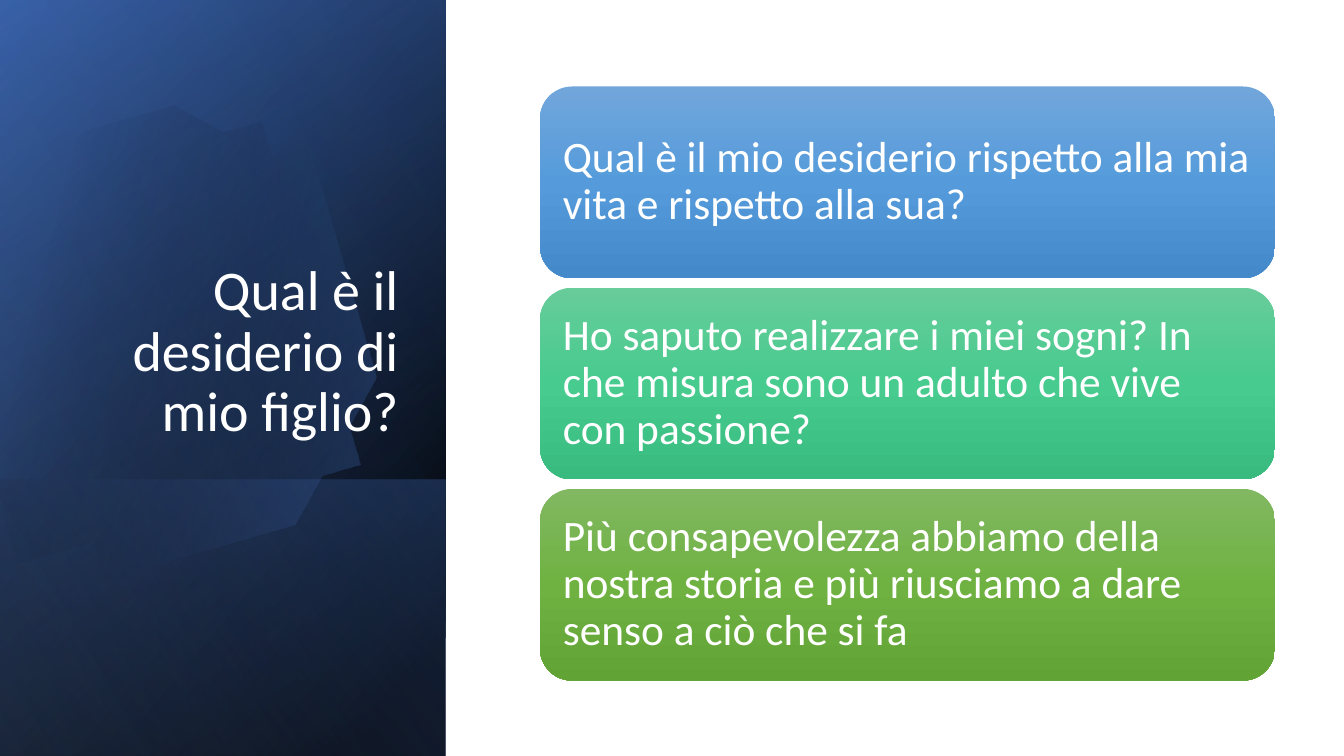
"""Build the slide on a child's wishes: a dark title panel beside three cards."""
import math

from pptx import Presentation
from pptx import util as u
from pptx.dml.color import RGBColor
from pptx.enum import shapes, text
from pptx.oxml import parse_xml
from pptx.oxml.ns import nsdecls, qn


def color(value):
    """Turn a hex string into a colour."""
    return RGBColor.from_string(value)


def bezier(start, first, second, end, steps=16):
    """Return the points of a cubic curve after its start."""
    points = []
    for step in range(1, steps + 1):
        t = step / steps
        weights = ((1 - t) ** 3, 3 * t * (1 - t) ** 2, 3 * t * t * (1 - t), t ** 3)
        corners = (start, first, second, end)
        points.append(tuple(sum(w * c[axis] for w, c in zip(weights, corners))
                            for axis in (0, 1)))
    return points


def turn(point, center, degrees):
    """Rotate a point clockwise around a center."""
    angle = math.radians(degrees)
    dx, dy = point[0] - center[0], point[1] - center[1]
    return (center[0] + dx * math.cos(angle) - dy * math.sin(angle),
            center[1] + dx * math.sin(angle) + dy * math.cos(angle))


class SlideBuilder:
    """Hold the style and the current slide."""

    font = {"name": "Calibri", "color": "FFFFFF"}

    def __init__(self, slide):
        """Keep the slide to draw on."""
        self.slide = slide

    def gradient(self, shape, stops, angle):
        """Fill a shape with (position, colour, opacity) stops and no outline."""
        shape.shadow.inherit = False
        shape.line.fill.background()
        shape.fill.gradient()
        marks = "".join(
            f'<a:gs pos="{position * 1000}"><a:srgbClr val="{tint}">'
            f'<a:alpha val="{opacity * 1000}"/></a:srgbClr></a:gs>'
            for position, tint, opacity in stops)
        properties = shape._element.spPr
        properties.replace(properties.find(qn("a:gradFill")), parse_xml(
            f'<a:gradFill {nsdecls("a")} rotWithShape="1"><a:gsLst>{marks}</a:gsLst>'
            f'<a:lin ang="{angle * 60000}" scaled="0"/></a:gradFill>'))

    def label(self, shape, words, size, align, anchor, inset):
        """Put one styled paragraph into a shape."""
        frame = shape.text_frame
        frame_format = {"word_wrap": True, "vertical_anchor": anchor,
                        "margin_left": u.Cm(inset), "margin_right": u.Cm(inset),
                        "margin_top": u.Cm(0.13), "margin_bottom": u.Cm(0.13)}
        for key, value in frame_format.items():
            setattr(frame, key, value)
        paragraph = frame.paragraphs[0]
        for key, value in {"alignment": align, "line_spacing": 0.9}.items():
            setattr(paragraph, key, value)
        run = paragraph.add_run()
        run.text = words
        for key, value in {"name": self.font["name"], "size": u.Pt(size)}.items():
            setattr(run.font, key, value)
        run.font.color.rgb = color(self.font["color"])

    def layer(self, box, stops, angle):
        """Add a mirrored rectangle on its side as a layer of the panel."""
        sheet = self.slide.shapes.add_shape(
            shapes.MSO_SHAPE.RECTANGLE, *map(u.Cm, box))
        sheet.rotation = 90
        sheet._element.spPr.xfrm.set("flipH", "1")
        self.gradient(sheet, stops, angle)

    def disc(self, outline, center, rotation, stops, angle):
        """Add a tilted disc whose outline is given as it stands on the slide."""
        upright = [turn(point, center, -rotation) for point in outline]
        builder = self.slide.shapes.build_freeform(*upright[0], scale=u.Cm(1))
        builder.add_line_segments(upright[1:], close=True)
        circle = builder.convert_to_shape()
        circle.rotation = rotation
        self.gradient(circle, stops, angle)

    def title(self, box, words):
        """Add the title at the right edge of the panel."""
        heading = self.slide.shapes.add_textbox(*map(u.Cm, box))
        self.label(heading, words, 40, text.PP_ALIGN.RIGHT,
                   text.MSO_ANCHOR.BOTTOM, 0.25)

    def card(self, box, words, tints):
        """Add a rounded card with a three-colour gradient."""
        card = self.slide.shapes.add_shape(
            shapes.MSO_SHAPE.ROUNDED_RECTANGLE, *map(u.Cm, box))
        self.gradient(card, [(i * 50, tint, 100) for i, tint in enumerate(tints)], 90)
        self.label(card, words, 31, text.PP_ALIGN.LEFT,
                   text.MSO_ANCHOR.MIDDLE, 0.34)


PANEL = (-3.91, 3.91, 19.05, 11.23)
FOOT = (2.13, 9.96, 6.96, 11.23)
BASE_LAYERS = [
    (PANEL, [(8, "000000", 100), (100, "2F5597", 100)], 50),
    (PANEL, [(0, "000000", 0), (99, "4472C4", 46)], 30),
    (FOOT, [(2, "4472C4", 29), (100, "000000", 30)], 130),
]
GLOW = (PANEL, [(0, "000000", 0), (99, "8FAADC", 11)], 120)
DISC_START = (3.78, 2.79)
DISC_CURVES = [
    ((6.25, 2.84), (8.51, 4.5), (9.22, 6.99)),
    ((10.11, 10.08), (8.33, 13.28), (5.26, 14.17)),
    ((3.33, 14.73), (1.35, 14.25), (-0.08, 13.06)),
]
DISC_EDGE = [(-0.38, 12.78), (-0.38, 4.45), (0, 4.09)]
DISC_CLOSE = [
    ((0.58, 3.61), (1.27, 3.25), (2.03, 3.02)),
    ((2.62, 2.87), (3.2, 2.79), DISC_START),
]
CARDS = [
    ("Qual è il mio desiderio rispetto alla mia vita e rispetto alla sua?",
     ("71A6DB", "559BDB", "448ACA")),
    ("Ho saputo realizzare i miei sogni? In che misura sono un adulto che vive "
     "con passione?", ("67CC9A", "47CB8E", "39BB7F")),
    ("Più consapevolezza abbiamo della nostra storia e più riusciamo a dare "
     "senso a ciò che si fa", ("81B861", "6FB242", "62A336")),
]
CARD_TOP, CARD_PITCH = 2.18, 5.07


def disc_outline():
    """Join the curves and the straight edge of the disc."""
    outline = [DISC_START]
    for curve in DISC_CURVES:
        outline += bezier(outline[-1], *curve)
    outline += DISC_EDGE
    for curve in DISC_CLOSE:
        outline += bezier(outline[-1], *curve)
    return outline[:-1]


def main():
    """Draw the panel, the title and the cards, then save."""
    deck = Presentation()
    deck.slide_width, deck.slide_height = u.Cm(33.87), u.Cm(19.05)
    page = SlideBuilder(deck.slides.add_slide(deck.slide_layouts[6]))
    for layer in BASE_LAYERS:
        page.layer(*layer)
    page.disc(disc_outline(), (4.03, 8.5), -16.1,
              [(29, "000000", 0), (100, "4472C4", 43)], 30)
    page.layer(*GLOW)
    page.title((1.63, 4.67, 8.66, 6.65), "Qual è il desiderio di mio figlio?")
    for row, (words, tints) in enumerate(CARDS):
        page.card((13.61, CARD_TOP + row * CARD_PITCH, 18.52, 4.83), words, tints)
    deck.save("out.pptx")


if __name__ == "__main__":
    main()
